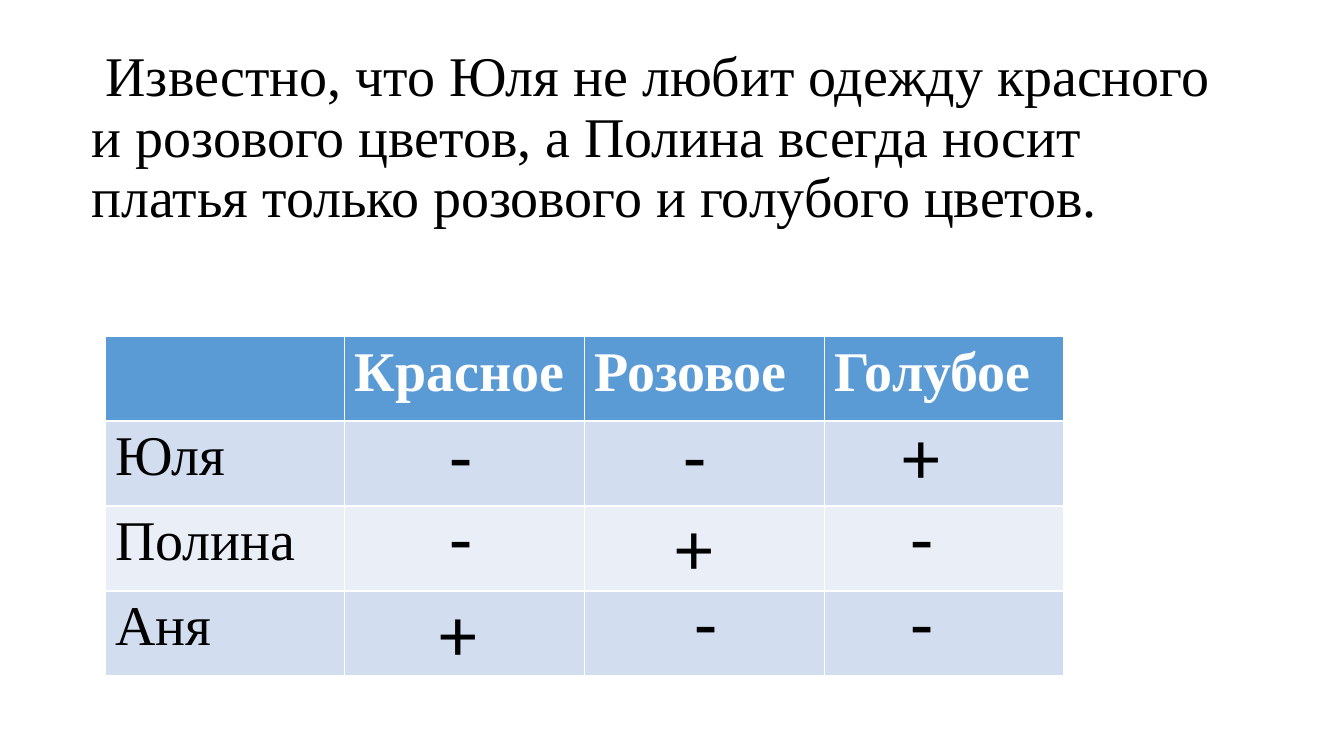
from pptx import Presentation
from pptx.dml.color import RGBColor
from pptx.enum.text import MSO_AUTO_SIZE, PP_ALIGN
from pptx.util import Cm, Pt

SERIF, SANS = "Times New Roman", "Calibri"
BLACK, WHITE, BLUE = "000000", "FFFFFF", "5B9BD5"
BANDS = ["D2DEEF", "EAEFF7"]

CLUE = (" Известно, что Юля не любит одежду красного и розового цветов, "
        "а Полина всегда носит платья только розового и голубого цветов.")
ROWS = [
    ["", "Красное", "Розовое", "Голубое"],
    ["Юля", "", "", ""],
    ["Полина", "", "", ""],
    ["Аня", "", "", ""],
]
# Sign, centre and top in cm, one line for each table row
MARKS = [
    [("-", 11.63, 10.19), ("-", 17.51, 10.19), ("+", 23.23, 10.19)],
    [("-", 11.63, 12.24), ("+", 17.51, 12.47), ("-", 23.23, 12.24)],
    [("+", 11.56, 14.63), ("-", 17.79, 14.38), ("-", 23.23, 14.38)],
]
WIDTHS = {"+": 1.68, "-": 1.14}
COL, ROW = 6.04, 2.14


def color(code):
    return RGBColor.from_string(code)


def write(para, text, size, face, code=BLACK, bold=False):
    run = para.add_run()
    run.text = text
    font = run.font
    font.size, font.name, font.bold = Pt(size), face, bold
    font.color.rgb = color(code)


def add_clue(slide):
    box = slide.shapes.add_textbox(Cm(2.06), Cm(1.09), Cm(29.54), Cm(10.03))
    box.text_frame.word_wrap = True
    para = box.text_frame.paragraphs[0]
    para.line_spacing = 0.9
    para.space_before = Pt(10)
    write(para, CLUE, 40, SERIF)


def add_grid(slide):
    rows, cols = len(ROWS), len(ROWS[0])
    table = slide.shapes.add_table(rows, cols, Cm(2.65), Cm(8.47),
                                   Cm(COL * cols), Cm(ROW * rows)).table
    for col in table.columns:
        col.width = Cm(COL)
    for i, texts in enumerate(ROWS):
        table.rows[i].height = Cm(ROW)
        head = i == 0
        for j, text in enumerate(texts):
            cell = table.cell(i, j)
            cell.fill.solid()
            cell.fill.fore_color.rgb = color(BLUE if head else BANDS[(i - 1) % 2])
            if text:
                write(cell.text_frame.paragraphs[0], text, 40, SERIF,
                      WHITE if head else BLACK, head)


def add_mark(slide, sign, mid, top):
    width = WIDTHS[sign]
    box = slide.shapes.add_textbox(Cm(mid - width / 2), Cm(top), Cm(width), Cm(2.57))
    frame = box.text_frame
    frame.word_wrap = False
    frame.auto_size = MSO_AUTO_SIZE.SHAPE_TO_FIT_TEXT
    para = frame.paragraphs[0]
    para.alignment = PP_ALIGN.CENTER
    write(para, sign, 54, SANS)


def main():
    deck = Presentation()
    deck.slide_width, deck.slide_height = Cm(33.87), Cm(19.05)
    slide = deck.slides.add_slide(deck.slide_layouts[6])
    add_clue(slide)
    add_grid(slide)
    for line in MARKS:
        for mark in line:
            add_mark(slide, *mark)
    deck.save("out.pptx")


if __name__ == "__main__":
    main()
